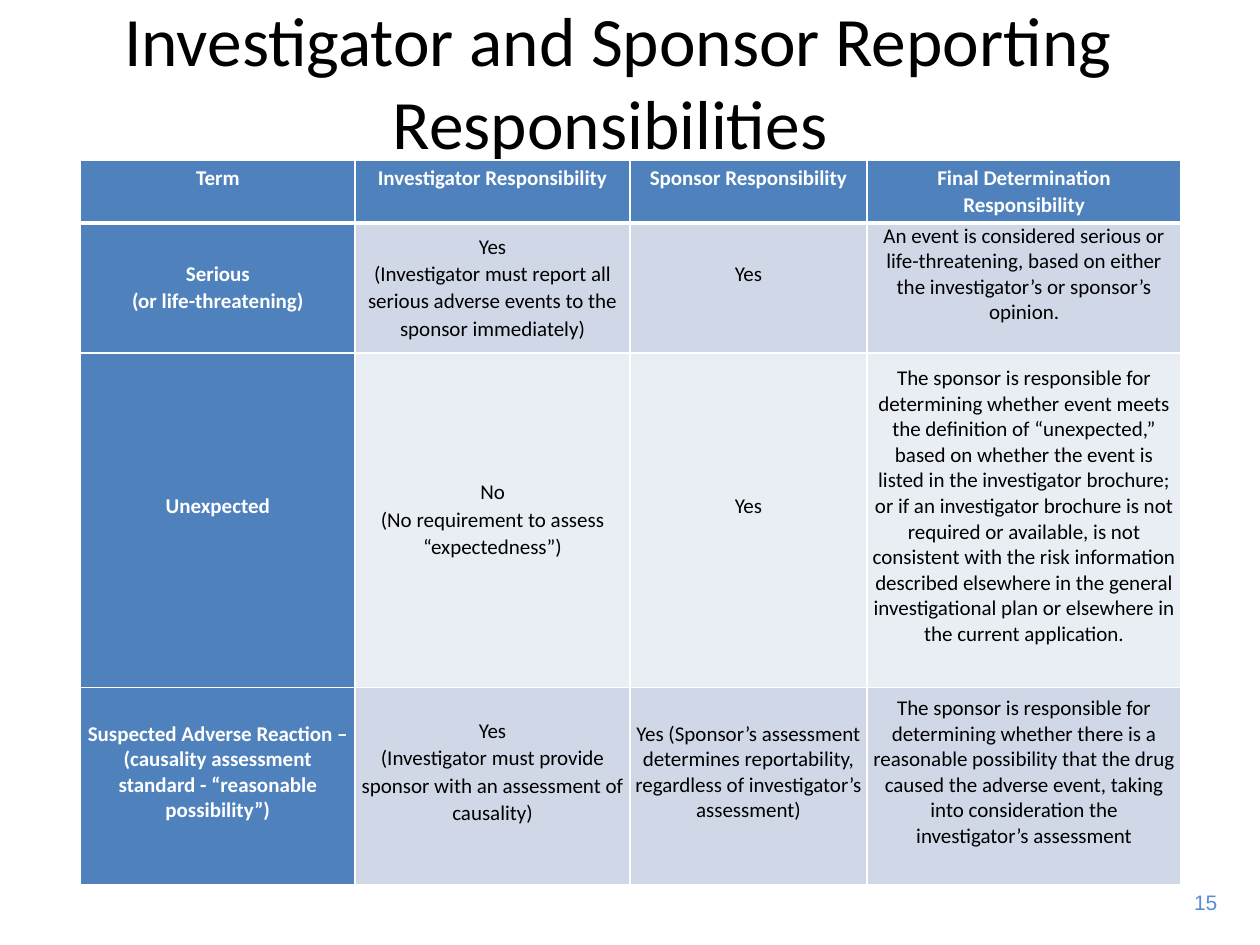
from dataclasses import dataclass

from lxml.etree import SubElement
from pptx import Presentation
from pptx.dml.color import RGBColor
from pptx.enum.text import MSO_ANCHOR, MSO_AUTO_SIZE, PP_ALIGN
from pptx.oxml.ns import qn
from pptx.util import Pt

TITLE = "Investigator and Sponsor Reporting Responsibilities "
PAGE_NUMBER = "15"

# Each cell is a tuple of paragraphs.
RESPONSIBILITIES = [
    [
        ("Term",),
        ("Investigator Responsibility",),
        ("Sponsor Responsibility",),
        ("Final Determination", "Responsibility"),
    ],
    [
        ("Serious", "(or life-threatening)"),
        ("Yes", "(Investigator must report all serious adverse events to the "
                "sponsor immediately)"),
        ("Yes",),
        ("An event is considered serious or life-threatening, based on either "
         "the investigator’s or sponsor’s opinion.",),
    ],
    [
        ("Unexpected",),
        ("No", "(No requirement to assess “expectedness”)"),
        ("Yes",),
        ("The sponsor is responsible for determining whether event meets the "
         "definition of “unexpected,” based on whether the event is listed in "
         "the investigator brochure; or if an investigator brochure is not "
         "required or available, is not consistent with the risk information "
         "described elsewhere in the general investigational plan or elsewhere "
         "in the current application.",),
    ],
    [
        ("Suspected Adverse Reaction – (causality assessment standard - "
         "“reasonable possibility”)",),
        ("Yes", "(Investigator must provide sponsor with an assessment of "
                "causality)"),
        ("Yes (Sponsor’s assessment determines reportability, regardless of "
         "investigator’s assessment)",),
        ("The sponsor is responsible for determining whether there is a "
         "reasonable possibility that the drug caused the adverse event, "
         "taking into consideration the investigator’s assessment",),
    ],
]
RAISED_CELLS = {(3, 1)}  # two-paragraph cells that also sit one line higher

TABLE_LEFT, TABLE_TOP = 46, 91.5
COLUMN_WIDTHS = [157, 157, 135.5, 179.5]
ROW_HEIGHTS = [36, 73, 191, 113]
SIDE_MARGIN = 3
SPARE_LINE = 15.7
LOOSE_SPACING = 1.07


@dataclass(frozen=True)
class Theme:
    font: str = "Calibri"
    number_font: str = "Arial"
    title_size: float = 39.6
    body_size: float = 12
    ink: str = "000000"
    heading_ink: str = "FFFFFF"
    heading_fill: str = "4F81BD"
    bands: tuple = ("E9EDF4", "D0D8E8")
    border: str = "FFFFFF"
    border_width: float = 1
    header_rule: float = 3
    number_ink: str = "558ED5"


THEME = Theme()


def style(paragraph, font, size, color, align=PP_ALIGN.CENTER, bold=False):
    paragraph.alignment = align
    paragraph.font.name = font
    paragraph.font.size = Pt(size)
    paragraph.font.bold = bold
    paragraph.font.color.rgb = RGBColor.from_string(color)


def add_borders(cell, row):
    """Draw all four sides, with a heavier rule between header and body."""
    widths = {side: THEME.border_width for side in ("lnL", "lnR", "lnT", "lnB")}
    if row == 0:
        widths["lnB"] = THEME.header_rule
    elif row == 1:
        widths["lnT"] = THEME.header_rule
    properties = cell._tc.get_or_add_tcPr()
    for side, width in widths.items():
        line = SubElement(properties, qn(f"a:{side}"), w=str(Pt(width)))
        fill = SubElement(line, qn("a:solidFill"))
        SubElement(fill, qn("a:srgbClr"), val=THEME.border)


def fill_cell(cell, row, column, lines):
    heading = row == 0 or column == 0
    add_borders(cell, row)
    cell.fill.solid()
    cell.fill.fore_color.rgb = RGBColor.from_string(
        THEME.heading_fill if heading else THEME.bands[row % 2])
    cell.vertical_anchor = MSO_ANCHOR.MIDDLE
    cell.margin_left = cell.margin_right = Pt(SIDE_MARGIN)
    cell.margin_top = 0
    raised = len(lines) == 1 or (row, column) in RAISED_CELLS
    cell.margin_bottom = Pt(SPARE_LINE if raised else 0)
    cell.text_frame.text = "\n".join(lines)
    for position, paragraph in enumerate(cell.text_frame.paragraphs):
        style(paragraph, THEME.font, THEME.body_size,
              THEME.heading_ink if heading else THEME.ink, bold=heading)
        if position:
            paragraph.line_spacing = LOOSE_SPACING


def add_title(slide):
    title = slide.shapes.title
    title.left, title.top, title.width, title.height = map(
        Pt, (18, 9.4, 670.3, 72.7))
    frame = title.text_frame
    frame.text = TITLE
    frame.word_wrap = True
    frame.auto_size = MSO_AUTO_SIZE.NONE
    frame.vertical_anchor = MSO_ANCHOR.MIDDLE
    style(frame.paragraphs[0], THEME.font, THEME.title_size, THEME.ink)


def add_responsibility_table(slide):
    table = slide.shapes.add_table(
        len(ROW_HEIGHTS), len(COLUMN_WIDTHS), Pt(TABLE_LEFT), Pt(TABLE_TOP),
        Pt(sum(COLUMN_WIDTHS)), Pt(sum(ROW_HEIGHTS))).table
    for column, width in zip(table.columns, COLUMN_WIDTHS):
        column.width = Pt(width)
    for row, height in zip(table.rows, ROW_HEIGHTS):
        row.height = Pt(height)
    for row, cells in enumerate(RESPONSIBILITIES):
        for column, lines in enumerate(cells):
            fill_cell(table.cell(row, column), row, column, lines)


def add_page_number(slide):
    frame = slide.shapes.add_textbox(
        Pt(673.2), Pt(504.7), Pt(29.5), Pt(21.6)).text_frame
    frame.word_wrap = True
    frame.text = PAGE_NUMBER
    style(frame.paragraphs[0], THEME.number_font, THEME.body_size,
          THEME.number_ink, PP_ALIGN.RIGHT)


def main():
    presentation = Presentation()
    presentation.slide_width, presentation.slide_height = Pt(720), Pt(540)
    slide = presentation.slides.add_slide(presentation.slide_layouts[5])
    add_title(slide)
    add_responsibility_table(slide)
    add_page_number(slide)
    presentation.save("out.pptx")


if __name__ == "__main__":
    main()
